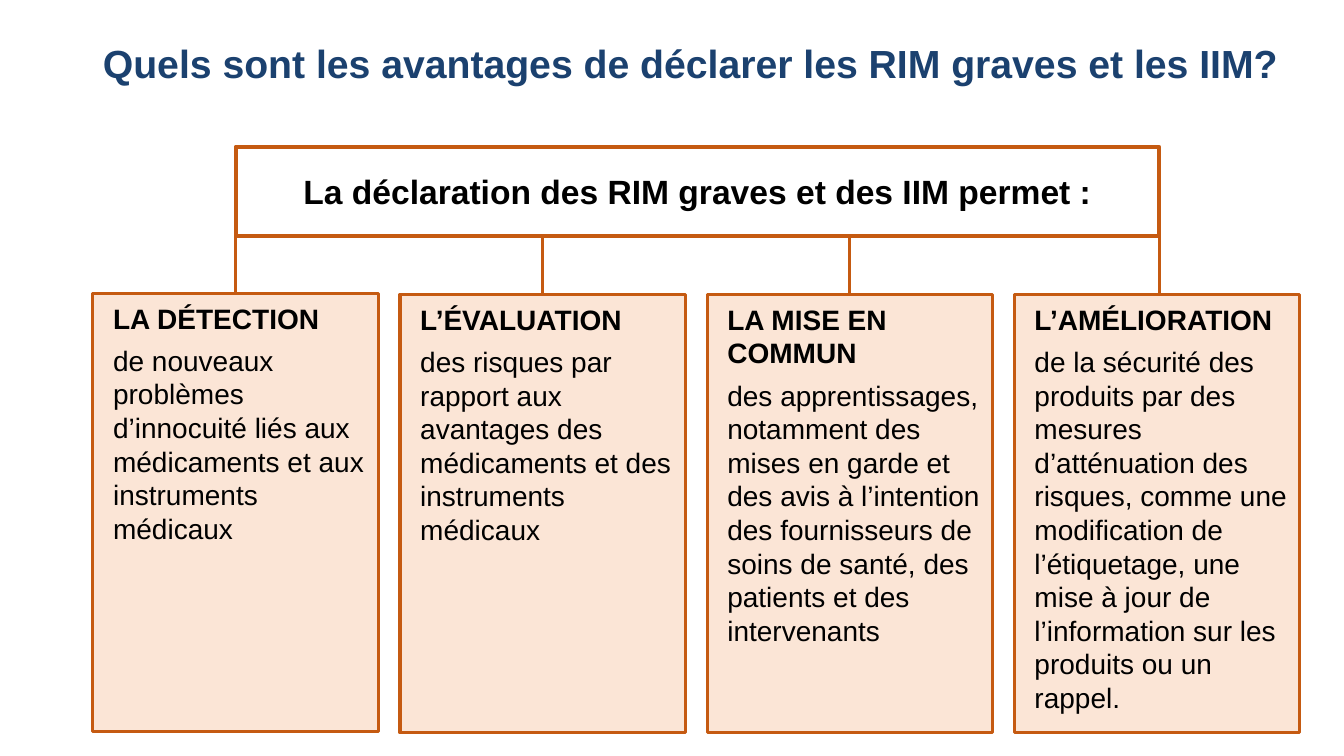
from lxml.etree import SubElement
from pptx import Presentation
from pptx.dml.color import RGBColor
from pptx.enum.shapes import MSO_CONNECTOR, MSO_SHAPE
from pptx.enum.text import MSO_ANCHOR, PP_ALIGN
from pptx.oxml.ns import qn
from pptx.util import Cm, Pt

ORANGE = "C55A11"
CARD_LEFT, CARD_WIDTH, CARD_HEIGHT, CARD_PITCH = 2.34, 7.19, 11.05, 7.74
HEADER_LEFT, HEADER_TOP, HEADER_WIDTH, HEADER_HEIGHT = 5.94, 3.7, 23.27, 2.24
BRANCH_TOP = 5.11
BRANCHES = [(5.94, 11.28), (13.67, 11.43), (21.41, 11.43), (29.21, 11.02)]

CARDS = [
    (7.39, "LA DÉTECTION",
     "de nouveaux problèmes d’innocuité liés aux médicaments et aux instruments médicaux"),
    (7.42, "L’ÉVALUATION",
     "des risques par rapport aux avantages des médicaments et des instruments médicaux"),
    (7.42, "LA MISE EN COMMUN",
     "des apprentissages, notamment des mises en garde et des avis à l’intention "
     "des fournisseurs de soins de santé, des patients et des intervenants"),
    (7.42, "L’AMÉLIORATION",
     "de la sécurité des produits par des mesures d’atténuation des risques, comme une "
     "modification de l’étiquetage, une mise à jour de l’information sur les produits "
     "ou un rappel."),
]


def set_color(color_format, value):
    color_format.rgb = RGBColor.from_string(value)


def write_paragraph(paragraph, text, size, color="000000", bold=True, align=PP_ALIGN.LEFT):
    paragraph.text = text
    paragraph.alignment = align
    font = paragraph.runs[0].font
    font.name, font.size, font.bold = "Arial", Pt(size), bold
    set_color(font.color, color)


presentation = Presentation()
presentation.slide_width, presentation.slide_height = Cm(33.87), Cm(19.05)
slide = presentation.slides.add_slide(presentation.slide_layouts[5])

title = slide.shapes.title
title.left, title.top, title.width, title.height = Cm(2.34), Cm(0.99), Cm(30.43), Cm(2.24)
title.text_frame.vertical_anchor = MSO_ANCHOR.TOP
title_paragraph = title.text_frame.paragraphs[0]
write_paragraph(title_paragraph, "Quels sont les avantages de déclarer les RIM graves et les IIM?", 28, "1B416F")
title_paragraph.line_spacing = 0.9

for branch_left, branch_bottom in BRANCHES:
    connector = slide.shapes.add_connector(
        MSO_CONNECTOR.STRAIGHT, Cm(branch_left), Cm(BRANCH_TOP), Cm(branch_left), Cm(branch_bottom))
    set_color(connector.line.color, ORANGE)
    connector.line.width = Pt(2.25)
    SubElement(connector._element.spPr, qn("a:effectLst"))

boxes = [(HEADER_LEFT, HEADER_TOP, HEADER_WIDTH, HEADER_HEIGHT, "FFFFFF", 3)]
for index, (top, heading, detail) in enumerate(CARDS):
    boxes.append((CARD_LEFT + index * CARD_PITCH, top, CARD_WIDTH, CARD_HEIGHT, "FBE5D6", 2.25))

shapes = []
for left, top, width, height, fill, line_width in boxes:
    shape = slide.shapes.add_shape(MSO_SHAPE.RECTANGLE, Cm(left), Cm(top), Cm(width), Cm(height))
    shape.shadow.inherit = False
    shape.fill.solid()
    set_color(shape.fill.fore_color, fill)
    set_color(shape.line.color, ORANGE)
    shape.line.width = Pt(line_width)
    shape.text_frame.word_wrap = True
    shapes.append(shape)

header, *card_shapes = shapes
header.text_frame.vertical_anchor = MSO_ANCHOR.MIDDLE
write_paragraph(header.text_frame.paragraphs[0], "La déclaration des RIM graves et des IIM permet :",
                24, align=PP_ALIGN.CENTER)

for card, (top, heading, detail) in zip(card_shapes, CARDS):
    text_frame = card.text_frame
    text_frame.vertical_anchor = MSO_ANCHOR.TOP
    text_frame.margin_left, text_frame.margin_right = Cm(0.51), Cm(0.25)
    text_frame.margin_top, text_frame.margin_bottom = Cm(0.2), Cm(0.71)
    write_paragraph(text_frame.paragraphs[0], heading, 20)
    write_paragraph(text_frame.add_paragraph(), detail, 20, bold=False)
    for paragraph in text_frame.paragraphs:
        paragraph.space_before = Pt(6)

presentation.save("out.pptx")
